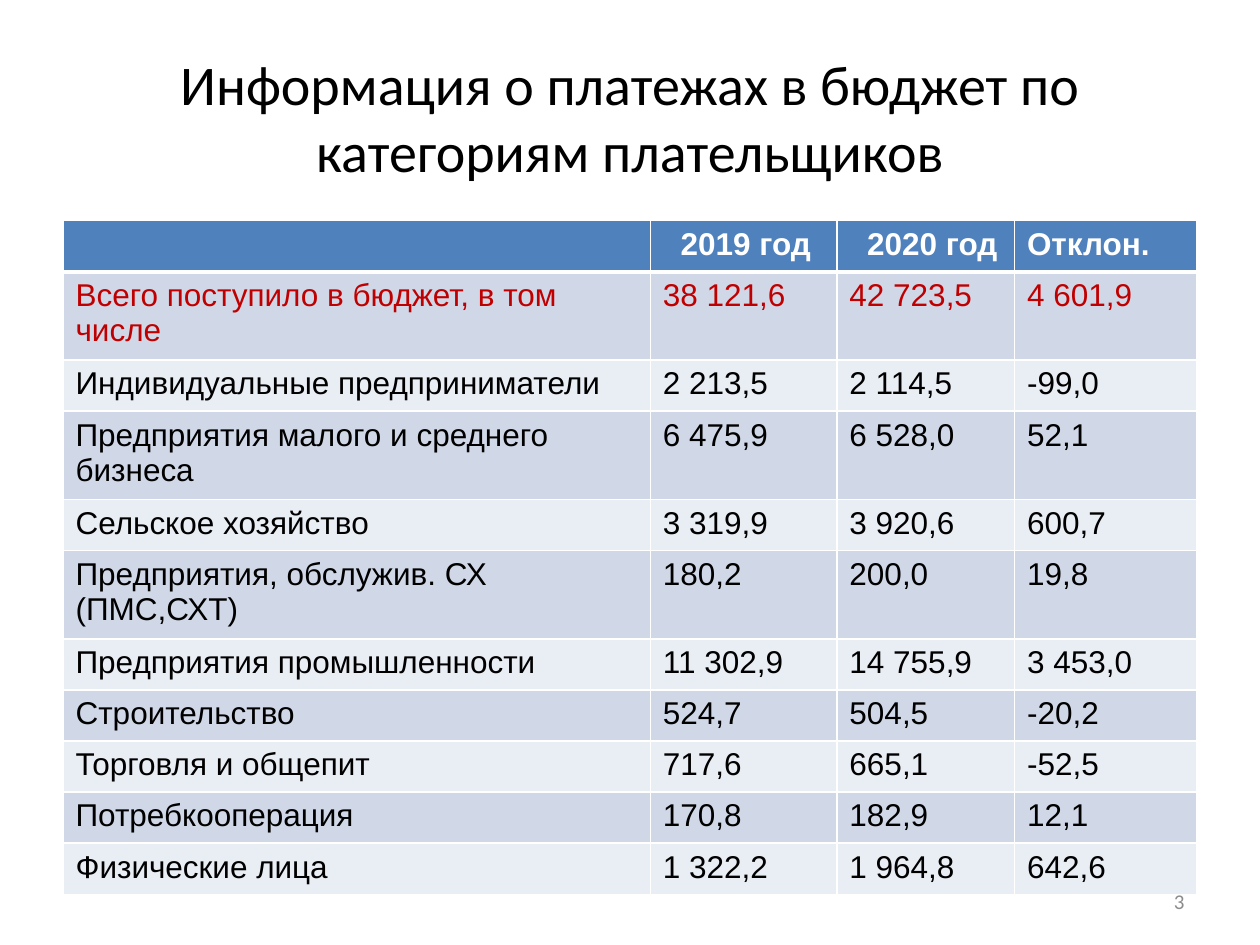
from lxml import etree
from pptx import Presentation
from pptx import util as u
from pptx.dml.color import RGBColor
from pptx.enum import text
from pptx.oxml.ns import qn

COLORS = {
    "black": "000000", "white": "FFFFFF", "grey": "8C8C8C", "red": "C00000",
    "header": "4F81BD", "odd": "D0D8E8", "even": "E9EDF4",
}
COLUMNS = [11.84, 3.76, 3.58, 3.68]
ROW_HEIGHT = 1.03
HEADER_INDENT = 0.61
PAYMENTS = [
    ("", "2019 год", "2020 год", "Отклон."),
    ("Всего поступило в бюджет, в том числе", "38 121,6", "42 723,5", "4 601,9"),
    ("Индивидуальные предприниматели", "2 213,5", "2 114,5", "-99,0"),
    ("Предприятия малого и среднего бизнеса", "6 475,9", "6 528,0", "52,1"),
    ("Сельское хозяйство", "3 319,9", "3 920,6", "600,7"),
    ("Предприятия, обслужив. СХ (ПМС,СХТ)", "180,2", "200,0", "19,8"),
    ("Предприятия промышленности", "11 302,9", "14 755,9", "3 453,0"),
    ("Строительство", "524,7", "504,5", "-20,2"),
    ("Торговля и общепит", "717,6", "665,1", "-52,5"),
    ("Потребкооперация", "170,8", "182,9", "12,1"),
    ("Физические лица", "1 322,2", "1 964,8", "642,6"),
]


class SlideBuilder:
    def __init__(self, page):
        self.page = page
        self.title_font = {"name": "Calibri", "size": u.Pt(32), "bold": False}
        self.number_font = {"name": "Calibri", "size": u.Pt(12), "bold": False}
        self.cell_font = {"name": "Arial", "size": u.Pt(18), "bold": False}
        self.header_font = {**self.cell_font, "bold": True}

    def words(self, frame, content, font, color, align):
        frame.word_wrap = True
        para = frame.paragraphs[0]
        para.alignment = align
        span = para.add_run()
        span.text = content
        for key, value in font.items():
            setattr(span.font, key, value)
        span.font.color.rgb = RGBColor.from_string(COLORS[color])

    def place(self, box, area):
        for key, value in zip(("left", "top", "width", "height"), area):
            setattr(box, key, u.Cm(value))
        box.text_frame.vertical_anchor = text.MSO_ANCHOR.MIDDLE

    def title(self, content, area):
        box = self.page.shapes.title
        self.place(box, area)
        self.words(box.text_frame, content, self.title_font, "black", text.PP_ALIGN.CENTER)

    def page_number(self, content, area):
        box = self.page.shapes.add_textbox(0, 0, 0, 0)
        self.place(box, area)
        self.words(box.text_frame, content, self.number_font, "grey", text.PP_ALIGN.RIGHT)

    def borders(self, cell, widths):
        properties = cell._tc.get_or_add_tcPr()
        for position, (side, width) in enumerate(widths.items()):
            line = etree.Element(qn(f"a:ln{side}"), w=str(u.Pt(width)))
            fill = etree.SubElement(line, qn("a:solidFill"))
            etree.SubElement(fill, qn("a:srgbClr"), val=COLORS["white"])
            properties.insert(position, line)

    def cell(self, cell, content, row, column):
        cell.fill.solid()
        shade = "header" if row == 0 else "odd" if row % 2 else "even"
        cell.fill.fore_color.rgb = RGBColor.from_string(COLORS[shade])
        self.borders(cell, {"L": 1, "R": 1, "T": 3 if row == 1 else 1, "B": 3 if row == 0 else 1})
        if row == 0 and column in (1, 2):
            cell.margin_left = u.Cm(HEADER_INDENT)
        if content:
            font = self.header_font if row == 0 else self.cell_font
            color = {0: "white", 1: "red"}.get(row, "black")
            self.words(cell.text_frame, content, font, color, text.PP_ALIGN.LEFT)

    def table(self, rows, left, top):
        table = self.page.shapes.add_table(
            len(rows), len(COLUMNS), u.Cm(left), u.Cm(top),
            u.Cm(sum(COLUMNS)), u.Cm(ROW_HEIGHT * len(rows))).table
        for column, width in zip(table.columns, COLUMNS):
            column.width = u.Cm(width)
        for row, values in enumerate(rows):
            table.rows[row].height = u.Cm(ROW_HEIGHT)
            for column, content in enumerate(values):
                self.cell(table.cell(row, column), content, row, column)


def main():
    deck = Presentation()
    deck.slide_width, deck.slide_height = u.Cm(25.4), u.Cm(19.05)
    slide = SlideBuilder(deck.slides.add_slide(deck.slide_layouts[5]))
    slide.title("Информация о платежах в бюджет по категориям плательщиков",
                (1.27, 0.76, 22.86, 3.18))
    slide.page_number("3", (18.2, 17.66, 5.93, 1.01))
    slide.table(PAYMENTS, 1.27, 4.45)
    deck.save("out.pptx")


if __name__ == "__main__":
    main()
